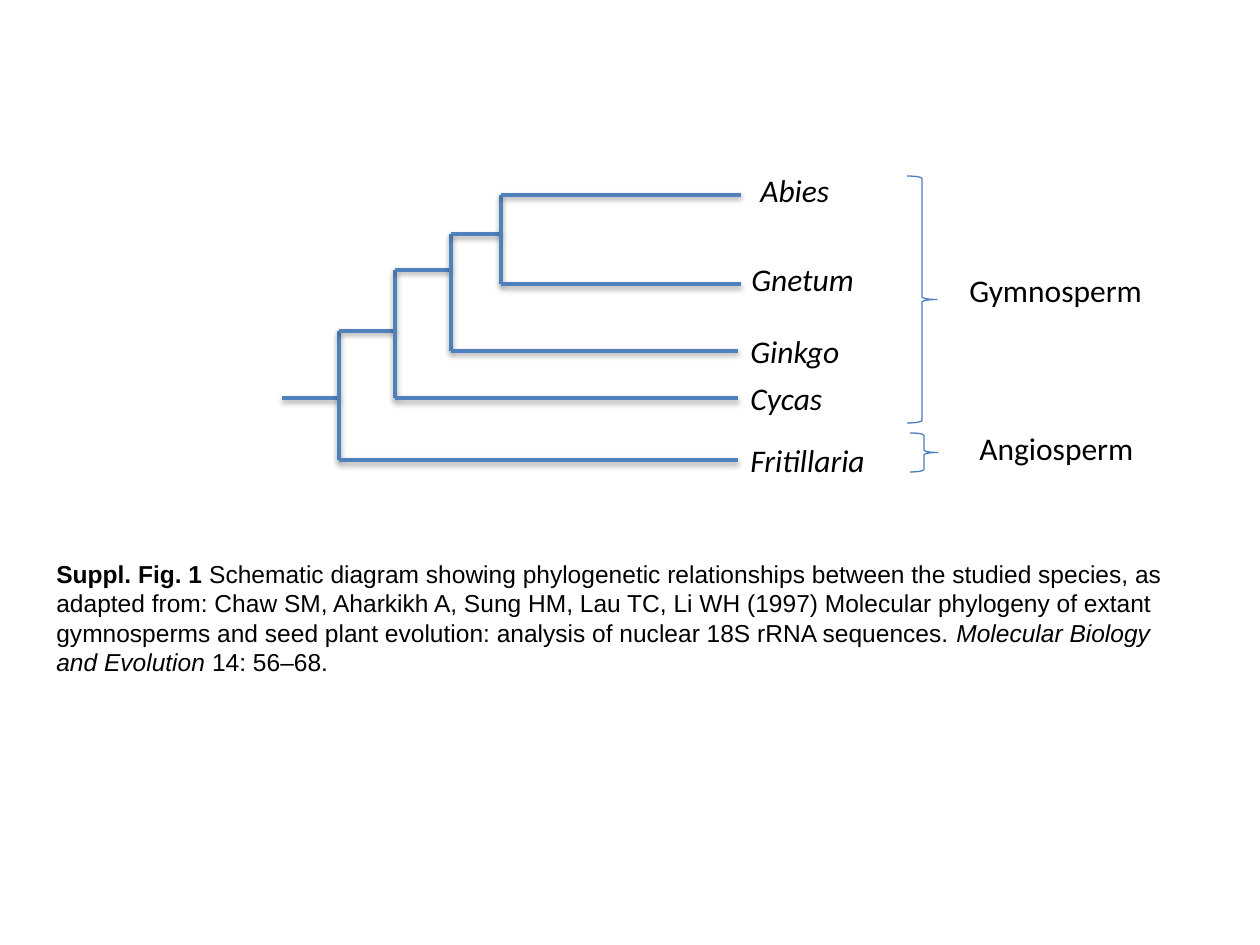
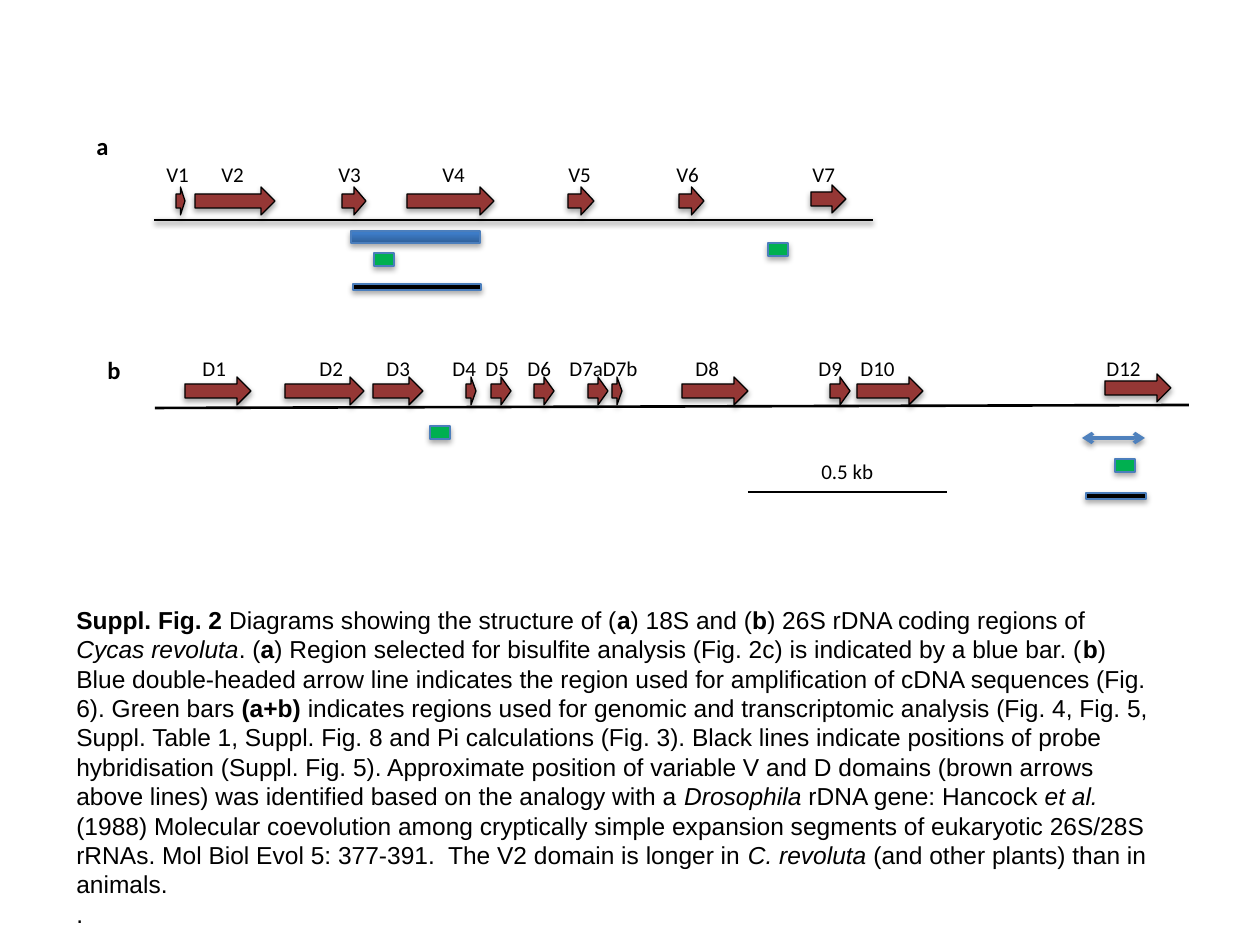
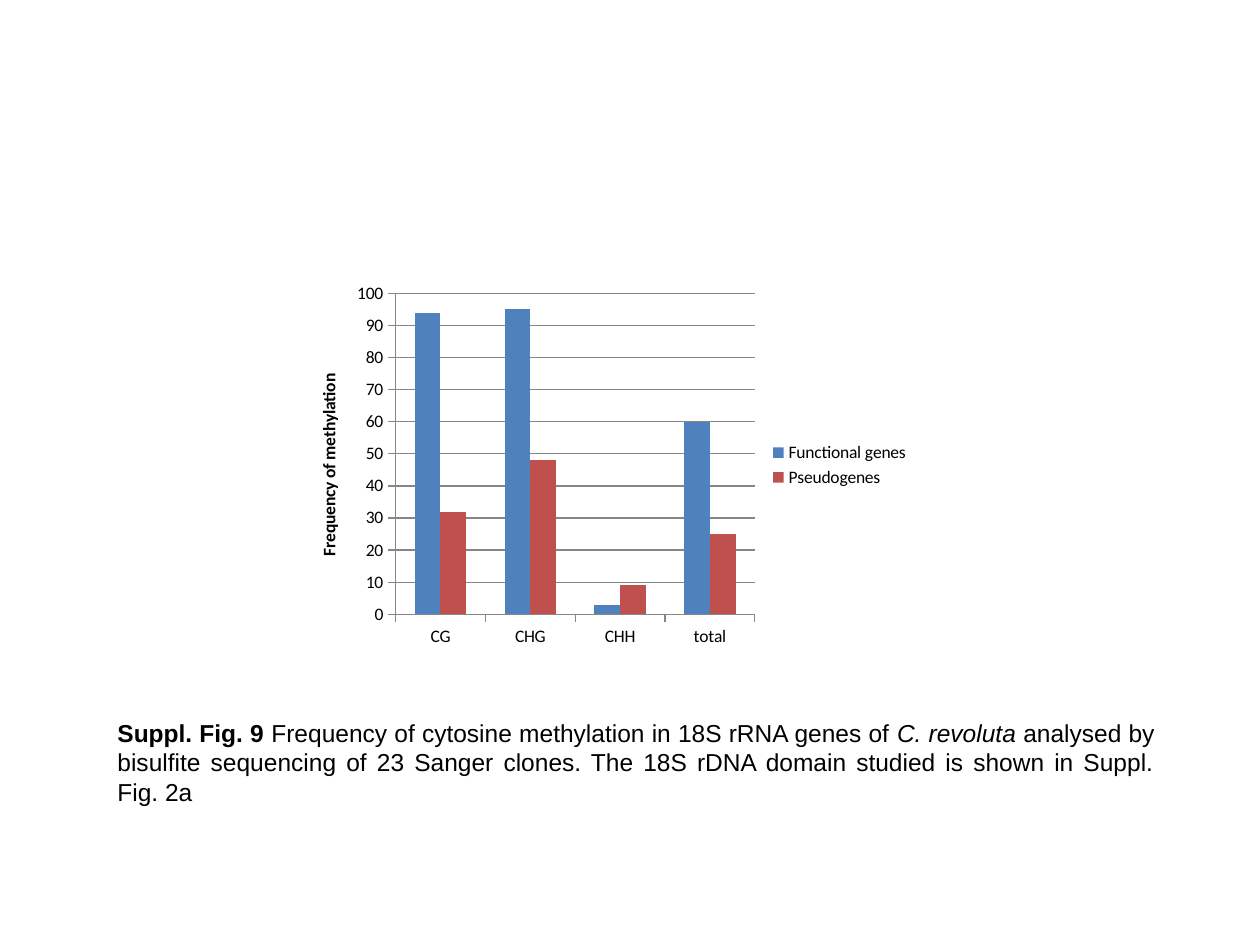
from typing import NamedTuple

from lxml import etree
from pptx import Presentation
from pptx.chart.data import CategoryChartData
from pptx.dml.color import RGBColor
from pptx.enum.chart import XL_CHART_TYPE, XL_LEGEND_POSITION
from pptx.enum.shapes import MSO_CONNECTOR, MSO_SHAPE
from pptx.enum.text import MSO_ANCHOR, MSO_AUTO_SIZE, PP_ALIGN
from pptx.oxml.ns import qn
from pptx.util import Emu, Pt

STRAIGHT = MSO_CONNECTOR.STRAIGHT
RECTANGLE = MSO_SHAPE.RECTANGLE
RIGHT_ARROW = MSO_SHAPE.RIGHT_ARROW
RIGHT_BRACE = MSO_SHAPE.RIGHT_BRACE
COLUMNS = XL_CHART_TYPE.COLUMN_CLUSTERED
LEGEND_RIGHT = XL_LEGEND_POSITION.RIGHT
MIDDLE = MSO_ANCHOR.MIDDLE
GROW = MSO_AUTO_SIZE.SHAPE_TO_FIT_TEXT
JUSTIFY = PP_ALIGN.JUSTIFY

PX_PER_INCH = 126
BLACK, BLUE, OUTLINE = "000000", "4F81BD", "4B7EBC"
BROWN, GREEN, RED, GRID = "953735", "00B050", "C0504D", "868686"
BAR_DARK, BAR_LIGHT = "2F5F99", "3D7CC7"
LABEL_FONT, CAPTION_FONT = "Calibri", "Arial"


class Box(NamedTuple):
    left: int
    top: int
    width: int
    height: int


class Run(NamedTuple):
    text: str
    bold: bool = False
    italic: bool = False


class Label(NamedTuple):
    text: str
    box: Box


class Clade(NamedTuple):
    """A fork of the tree; its lower branch ends at tip."""
    x: int
    top: int
    bottom: int
    tip: int


class Tick(NamedTuple):
    text: str
    left: int


class Domain(NamedTuple):
    left: int
    width: int
    rise: int = 0


class GeneMap(NamedTuple):
    letter: Label
    names_box: Box
    names: list[Tick]
    arrows_top: int
    arrows: list[Domain]


def px(length: float) -> Emu:
    return Emu(round(length * 914400 / PX_PER_INCH))


def rgb(colour: str) -> RGBColor:
    return RGBColor.from_string(colour)


def place(box: Box) -> list[Emu]:
    return [px(length) for length in box]


def set_shadow(shape, opacity: int = 0, distance: int = 0) -> None:
    """Give a soft shadow below, or none at opacity 0; call once the line is set."""
    effects = etree.SubElement(shape.element.spPr, qn("a:effectLst"))
    if opacity:
        outer = etree.SubElement(effects, qn("a:outerShdw"), blurRad="40000", dist=str(distance),
                                 dir="5400000", rotWithShape="0")
        tint = etree.SubElement(outer, qn("a:srgbClr"), val=BLACK)
        etree.SubElement(tint, qn("a:alpha"), val=str(opacity * 1000))


def add_line(slide, x1: int, y1: int, x2: int, y2: int, colour: str = BLUE,
             weight: float = 2, shadow: bool = True, arrows: bool = False) -> None:
    line = slide.shapes.add_connector(STRAIGHT, px(x1), px(y1), px(x2), px(y2))
    line.line.color.rgb = rgb(colour)
    line.line.width = Pt(weight)
    if arrows:
        for end in ("a:headEnd", "a:tailEnd"):
            etree.SubElement(line.element.spPr.find(qn("a:ln")), qn(end), type="arrow")
    set_shadow(line, 38 if shadow else 0, 20000)


def add_block(slide, kind, box: Box, fill: str | None, outline: str = OUTLINE):
    """Add a preset shape; without a fill it has no shadow either."""
    block = slide.shapes.add_shape(kind, *place(box))
    if fill:
        block.fill.solid()
        block.fill.fore_color.rgb = rgb(fill)
    else:
        block.fill.background()
    block.line.color.rgb = rgb(outline)
    block.line.width = Pt(0.75)
    set_shadow(block, 35 if fill else 0, 23000)
    return block


def add_text_frame(slide, box: Box, wrap: bool):
    frame = slide.shapes.add_textbox(*place(box)).text_frame
    frame.word_wrap = wrap
    frame.auto_size = GROW
    return frame


def set_font(font, name: str, size: int) -> None:
    font.name = name
    font.size = Pt(size)
    font.color.rgb = rgb(BLACK)


def add_label(slide, label: Label, size: int, wrap: bool = False,
              bold: bool = False, italic: bool = False):
    paragraph = add_text_frame(slide, label.box, wrap).paragraphs[0]
    paragraph.text = label.text
    set_font(paragraph.font, LABEL_FONT, size)
    paragraph.font.bold = bold
    paragraph.font.italic = italic
    return paragraph


def add_caption(slide, box: Box, paragraphs: list[list[Run]]):
    frame = add_text_frame(slide, box, True)
    frame.vertical_anchor = MIDDLE
    for index, runs in enumerate(paragraphs):
        paragraph = frame.add_paragraph() if index else frame.paragraphs[0]
        set_font(paragraph.font, CAPTION_FONT, 14)
        for part in runs:
            run = paragraph.add_run()
            run.text = part.text
            run.font.bold = part.bold
            run.font.italic = part.italic
    return frame


def bold(text: str) -> Run:
    return Run(text, bold=True)


def italic(text: str) -> Run:
    return Run(text, italic=True)


ROOT = (282, 398)
CLADES = [Clade(339, 331, 460, 738), Clade(395, 270, 398, 738),
          Clade(451, 234, 351, 738), Clade(501, 195, 284, 741)]
GENERA = [Label("Fritillaria", Box(738, 435, 142, 50)), Label("Cycas", Box(738, 373, 106, 50)),
          Label("Ginkgo", Box(738, 326, 125, 50)), Label("Gnetum", Box(739, 254, 129, 50)),
          Label("Abies", Box(748, 165, 98, 50))]
BRACES = [Box(907, 176, 30, 247), Box(910, 433, 28, 39)]
GROUPS = [Label("Gymnosperm", Box(957, 265, 200, 50)),
          Label("Angiosperm", Box(967, 423, 181, 50))]
TREE_CAPTION = [[
    bold("Suppl. Fig. 1"),
    Run(" Schematic diagram showing phylogenetic relationships between the studied species, "
        "as adapted from: Chaw SM, Aharkikh A, Sung HM, Lau TC, Li WH (1997) Molecular phylogeny "
        "of extant gymnosperms and seed plant evolution: analysis of nuclear 18S rRNA sequences. "),
    italic("Molecular Biology and Evolution"), Run(" 14: 56–68."),
]]

MAP_18S = GeneMap(
    Label("a", Box(84, 125, 38, 43)), Box(154, 155, 704, 38),
    [Tick("V1", 166), Tick("V2", 221), Tick("V3", 338), Tick("V4", 442), Tick("V5", 568),
     Tick("V6", 676), Tick("V7", 812)],
    187,
    [Domain(176, 9), Domain(195, 80), Domain(342, 24), Domain(407, 87), Domain(568, 26),
     Domain(679, 25), Domain(811, 35, rise=2)])
MAP_26S = GeneMap(
    Label("b", Box(95, 349, 39, 43)), Box(190, 349, 987, 38),
    [Tick("D1", 203), Tick("D2", 320), Tick("D3", 387), Tick("D4", 453), Tick("D5", 486),
     Tick("D6", 528), Tick("D7aD7b", 570), Tick("D8", 696), Tick("D9", 819), Tick("D10", 861),
     Tick("D12", 1107)],
    377,
    [Domain(185, 66), Domain(285, 79), Domain(373, 50), Domain(466, 10), Domain(491, 20),
     Domain(534, 20), Domain(588, 20), Domain(612, 10), Domain(682, 66), Domain(830, 20),
     Domain(857, 66), Domain(1105, 66, rise=3)])
ANALYSED = [(374, 253), (768, 243), (430, 426), (1115, 459)]
PROBES = [Box(353, 284, 128, 6), Box(1086, 493, 60, 6)]
MAPS_CAPTION = [[
    bold("Suppl. Fig. 2 "), Run("Diagrams showing the structure of ("), bold("a"),
    Run(") 18S and ("), bold("b"), Run(") 26S rDNA coding regions of "),
    italic("Cycas revoluta"), Run(". ("), bold("a"),
    Run(") Region selected for bisulfite analysis (Fig. 2c) is indicated by a blue bar. ("),
    bold("b"),
    Run(") Blue double-headed arrow line indicates the region used for amplification of cDNA "
        "sequences (Fig. 6). Green bars "),
    bold("(a+b) "),
    Run("indicates regions used for genomic and transcriptomic analysis (Fig. 4, Fig. 5, "
        "Suppl. Table 1, Suppl. Fig. 8 and Pi calculations (Fig. 3). Black lines indicate "
        "positions of probe hybridisation (Suppl. Fig. 5). Approximate position of variable V "
        "and D domains (brown arrows above lines) was identified based on the analogy with a "),
    italic("Drosophila "), Run("rDNA gene: Hancock"), italic(" et al. "),
    Run("(1988) Molecular coevolution among cryptically simple expansion segments of eukaryotic "
        "26S/28S rRNAs. Mol Biol Evol 5: 377-391.  The V2 domain is longer in "),
    italic("C. revoluta"), Run(" (and other plants) than in animals."),
], [Run(".")]]

CONTEXTS = ["CG", "CHG", "CHH", "total"]
METHYLATION = [("Functional genes", BLUE, (94, 95, 3, 60)), ("Pseudogenes", RED, (32, 48, 9, 25))]
CHART_CAPTION = [[
    bold("Suppl. Fig. 9 "), Run("Frequency of cytosine methylation in 18S rRNA genes of "),
    italic("C. revoluta "),
    Run("analysed by bisulfite sequencing of 23 Sanger clones. The 18S rDNA domain studied is "
        "shown in Suppl. Fig. 2a"),
]]


def build_tree_slide(slide) -> None:
    stem_x, stem_y = ROOT
    for clade in CLADES:
        add_line(slide, stem_x, stem_y, clade.x, stem_y)
        add_line(slide, clade.x, clade.top, clade.x, clade.bottom)
        add_line(slide, clade.x, clade.bottom, clade.tip, clade.bottom)
        stem_x, stem_y = clade.x, clade.top
    add_line(slide, stem_x, stem_y, CLADES[-1].tip, stem_y)
    for genus in GENERA:
        add_label(slide, genus, 18, wrap=True, italic=True)
    for brace in BRACES:
        add_block(slide, RIGHT_BRACE, brace, None)
    for group in GROUPS:
        add_label(slide, group, 18)
    add_caption(slide, Box(44, 552, 1145, 131), TREE_CAPTION)


def add_domain_names(slide, box: Box, names: list[Tick]) -> None:
    """Write the names on one line, each at its own tab stop after the first."""
    text = "\t".join(name.text for name in names)
    paragraph = add_label(slide, Label(text, box), 12, wrap=True)
    tabs = etree.Element(qn("a:tabLst"))
    for name in names[1:]:
        etree.SubElement(tabs, qn("a:tab"), pos=str(px(name.left - names[0].left)), algn="l")
    paragraph._p.get_or_add_pPr().insert(0, tabs)


def add_gene_map(slide, gene: GeneMap) -> None:
    add_label(slide, gene.letter, 14, bold=True)
    add_domain_names(slide, gene.names_box, gene.names)
    for domain in gene.arrows:
        box = Box(domain.left, gene.arrows_top - domain.rise, domain.width, 28)
        add_block(slide, RIGHT_ARROW, box, BROWN, BLACK)


def build_maps_slide(slide) -> None:
    add_caption(slide, Box(64, 597, 1106, 339), MAPS_CAPTION)
    add_line(slide, 154, 220, 873, 220, BLACK, 1.5)
    add_line(slide, 155, 408, 1189, 405, BLACK, 1.5, shadow=False)
    for gene in (MAP_18S, MAP_26S):
        add_gene_map(slide, gene)
    bisulfite_region = add_block(slide, RECTANGLE, Box(351, 231, 129, 12), BAR_LIGHT)
    bisulfite_region.fill.gradient()
    bisulfite_region.fill.gradient_angle = 90
    stops = bisulfite_region.fill.gradient_stops
    for stop, colour, position in zip(stops, (BAR_DARK, BAR_LIGHT), (0, 0.8)):
        stop.color.rgb = rgb(colour)
        stop.position = position
    for left, top in ANALYSED:
        add_block(slide, RECTANGLE, Box(left, top, 20, 13), GREEN)
    for probe in PROBES:
        add_block(slide, RECTANGLE, probe, BLACK)
    add_line(slide, 1082, 438, 1145, 438, arrows=True)
    add_line(slide, 748, 492, 947, 492, BLACK, 0.75, shadow=False)
    add_label(slide, Label("0.5 kb", Box(809, 452, 78, 38)), 12)


def build_chart_slide(slide) -> None:
    data = CategoryChartData()
    data.categories = CONTEXTS
    for name, _, values in METHYLATION:
        data.add_series(name, values)
    chart = slide.shapes.add_chart(COLUMNS, *place(Box(292, 276, 630, 378)), data).chart
    set_font(chart.font, LABEL_FONT, 10)
    chart.has_title = False
    chart.has_legend = True
    chart.legend.position = LEGEND_RIGHT
    chart.legend.include_in_layout = False

    plot = chart.plots[0]
    plot.gap_width = 150
    plot.overlap = 0
    plot.vary_by_categories = False
    for series, (_, colour, _) in zip(plot.series, METHYLATION):
        series.format.fill.solid()
        series.format.fill.fore_color.rgb = rgb(colour)

    frequency = chart.value_axis
    frequency.minimum_scale, frequency.maximum_scale, frequency.major_unit = 0, 100, 10
    title = frequency.axis_title.text_frame.paragraphs[0]
    title.text = "Frequency of methylation"
    set_font(title.font, LABEL_FONT, 10)
    title.font.bold = True
    for ruled in (frequency, frequency.major_gridlines, chart.category_axis):
        ruled.format.line.color.rgb = rgb(GRID)
        ruled.format.line.width = Pt(0.75)

    caption = add_caption(slide, Box(105, 711, 1062, 102), CHART_CAPTION).paragraphs[0]
    caption.alignment = JUSTIFY
    caption.space_after = Pt(6)


def main() -> None:
    deck = Presentation()
    deck.slide_width, deck.slide_height = px(1260), px(945)
    for build in (build_tree_slide, build_maps_slide, build_chart_slide):
        build(deck.slides.add_slide(deck.slide_layouts[6]))
    deck.save("out.pptx")


if __name__ == "__main__":
    main()
